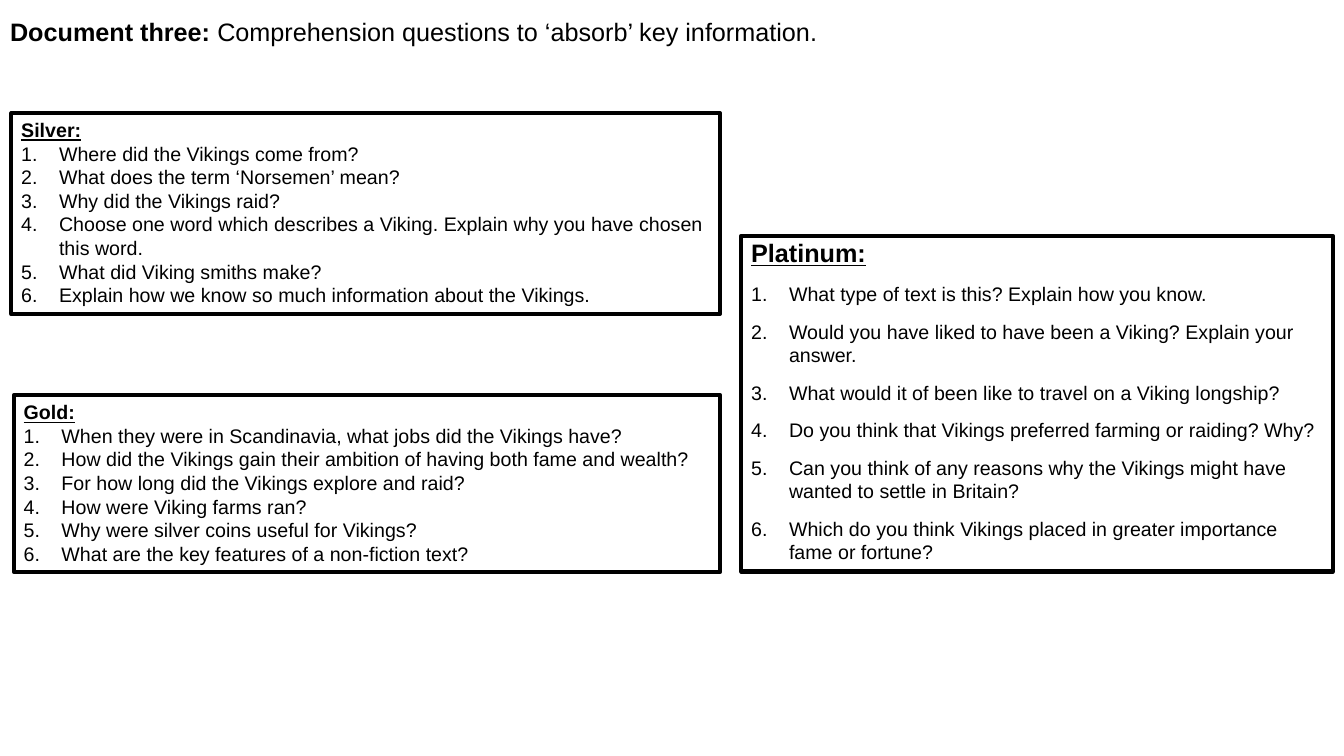
import pptx
import pptx.dml.color
import pptx.enum.text
import pptx.oxml.ns
import pptx.util
from lxml import etree

Pt = pptx.util.Pt
COLOURS = {"ink": "000000"}
FONT = "Arial"
TITLE_SIZE, BODY_SIZE = 18, 14
NUMBER_INDENT = 27

SILVER = [
    "Where did the Vikings come from?",
    "What does the term ‘Norsemen’ mean?",
    "Why did the Vikings raid?",
    "Choose one word which describes a Viking. Explain why you have chosen this word.",
    "What did Viking smiths make?",
    "Explain how we know so much information about the Vikings.",
]
GOLD = [
    "When they were in Scandinavia, what jobs did the Vikings have?",
    "How did the Vikings gain their ambition of having both fame and wealth?",
    "For how long did the Vikings explore and raid?",
    "How were Viking farms ran?",
    "Why were silver coins useful for Vikings?",
    "What are the key features of a non-fiction text?",
]
PLATINUM = [
    "What type of text is this? Explain how you know.",
    "Would you have liked to have been a Viking? Explain your answer.",
    "What would it of been like to travel on a Viking longship?",
    "Do you think that Vikings preferred farming or raiding? Why?",
    "Can you think of any reasons why the Vikings might have wanted to settle in Britain?",
    "Which do you think Vikings placed in greater importance fame or fortune?",
]


def colour(name):
    return pptx.dml.color.RGBColor.from_string(COLOURS[name])


def add_text(para, text, size=BODY_SIZE, bold=False, underline=False):
    span = para.add_run()
    span.text = text
    font = span.font
    font.name, font.size = FONT, Pt(size)
    font.bold, font.underline = bold, underline
    font.color.rgb = colour("ink")


def number_paragraph(para):
    """Give the paragraph an automatic number and a hanging indent."""
    properties = para._p.get_or_add_pPr()
    properties.set("marL", str(Pt(NUMBER_INDENT)))
    properties.set("indent", str(-Pt(NUMBER_INDENT)))
    ns = pptx.oxml.ns.qn
    etree.SubElement(properties, ns("a:buFont"), typeface="+mj-lt")
    etree.SubElement(properties, ns("a:buAutoNum"), type="arabicPeriod")


class QuestionSlide:
    def __init__(self, deck):
        self.page = deck.slides.add_slide(deck.slide_layouts[5])

    def title(self, label, text, left, top, width, height):
        box = self.page.shapes.title
        box.left, box.top, box.width, box.height = map(Pt, (left, top, width, height))
        frame = box.text_frame
        frame.word_wrap = True
        frame.auto_size = pptx.enum.text.MSO_AUTO_SIZE.NONE
        frame.vertical_anchor = pptx.enum.text.MSO_ANCHOR.MIDDLE
        para = frame.paragraphs[0]
        para.alignment = pptx.enum.text.PP_ALIGN.LEFT
        para.line_spacing = 0.9
        add_text(para, label, size=TITLE_SIZE, bold=True)
        add_text(para, text, size=TITLE_SIZE)

    def question_box(self, heading, questions, left, top, width, height,
                     heading_size=BODY_SIZE, heading_spacing=1.0, space_before=0, grow=True):
        box = self.page.shapes.add_textbox(*map(Pt, (left, top, width, height)))
        box.line.color.rgb = colour("ink")
        box.line.width = Pt(3)
        frame = box.text_frame
        frame.word_wrap = True
        sizes = pptx.enum.text.MSO_AUTO_SIZE
        frame.auto_size = sizes.SHAPE_TO_FIT_TEXT if grow else sizes.NONE
        heading_para = frame.paragraphs[0]
        heading_para.line_spacing = heading_spacing
        add_text(heading_para, heading, size=heading_size, bold=True, underline=True)
        for question in questions:
            para = frame.add_paragraph()
            para.line_spacing = 1.0
            para.space_before = Pt(space_before)
            number_paragraph(para)
            add_text(para, question)


def main():
    deck = pptx.Presentation()
    deck.slide_width, deck.slide_height = Pt(960), Pt(540)
    slide = QuestionSlide(deck)
    slide.title("Document three: ", "Comprehension questions to ‘absorb’ key information.",
                0, 0, 828, 47.5)
    slide.question_box("Platinum:", PLATINUM, 529.5, 168.5, 422.6, 239.8,
                       heading_size=TITLE_SIZE, heading_spacing=0.9, space_before=10, grow=False)
    slide.question_box("Silver:", SILVER, 8.1, 80.9, 506.2, 143.3)
    slide.question_box("Gold:", GOLD, 9.8, 282.4, 504.7, 126)
    deck.save("out.pptx")


if __name__ == "__main__":
    main()
